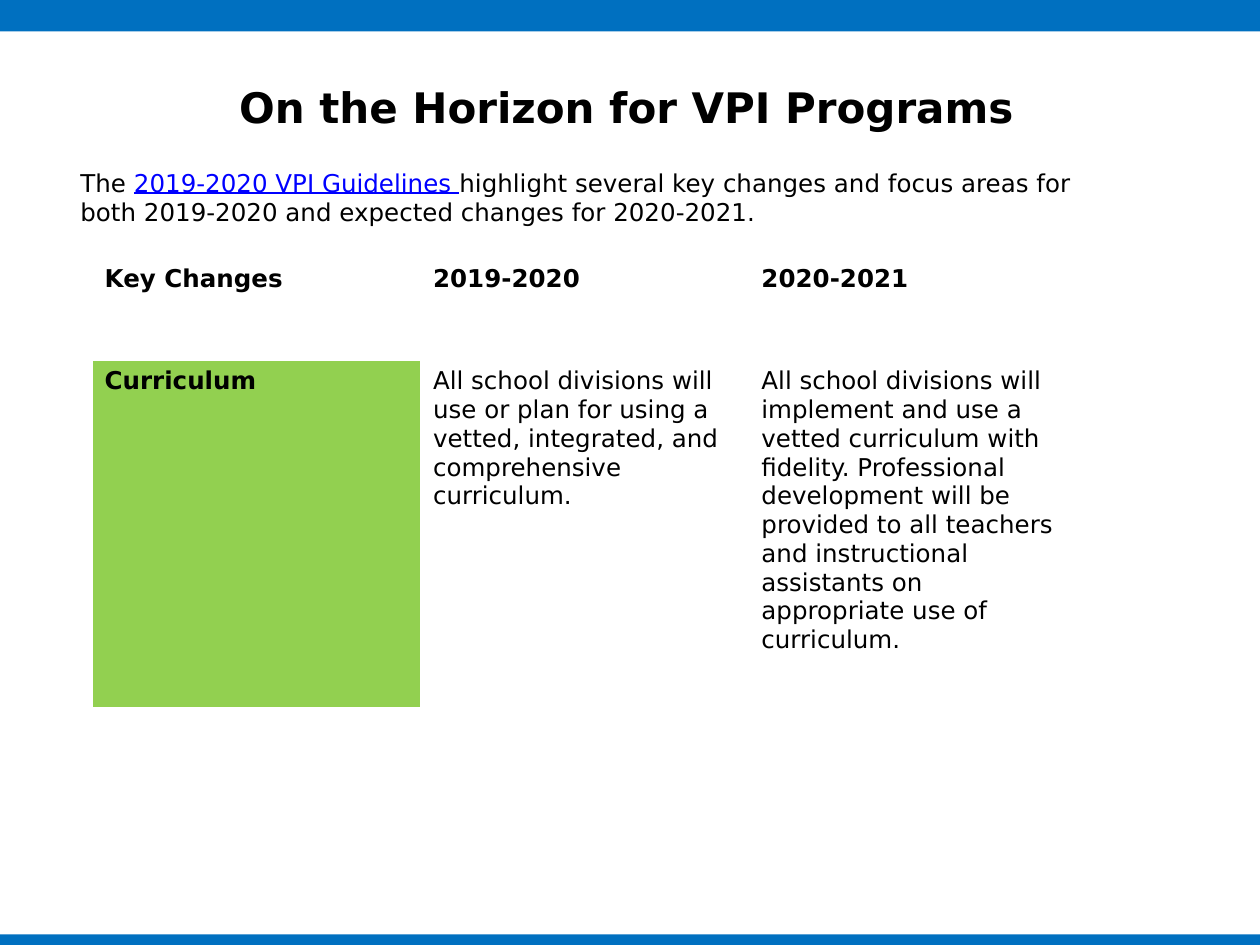
from pptx import Presentation
from pptx.dml.color import RGBColor
from pptx.enum.shapes import MSO_SHAPE
from pptx.enum.text import MSO_ANCHOR, PP_ALIGN
from pptx.util import Pt

FONT = "DejaVu Sans"
BLUE, GREEN, BLACK, LINK = "0070C0", "92D050", "000000", "0000FF"
WIDTH, HEIGHT = 720, 540

ROWS = [
    ["Key Changes", "2019-2020", "2020-2021"],
    ["Curriculum",
     "All school divisions will use or plan for using a vetted, integrated, "
     "and comprehensive curriculum.",
     "All school divisions will implement and use a vetted curriculum with "
     "fidelity. Professional development will be provided to all teachers and "
     "instructional assistants on appropriate use of curriculum."],
]


def rgb(value):
    return RGBColor.from_string(value)


def add_run(p, text, size=14, color=BLACK, bold=False, underline=False):
    r = p.add_run()
    r.text = text
    r.font.name = FONT
    r.font.size = Pt(size)
    r.font.color.rgb = rgb(color)
    r.font.bold = bold
    r.font.underline = underline


def add_box(s, x, y, w, h, anchor=MSO_ANCHOR.TOP):
    tf = s.shapes.add_textbox(Pt(x), Pt(y), Pt(w), Pt(h)).text_frame
    tf.word_wrap = True
    tf.vertical_anchor = anchor
    return tf.paragraphs[0]


def add_band(s, x, y, w, h):
    sp = s.shapes.add_shape(MSO_SHAPE.RECTANGLE, Pt(x), Pt(y), Pt(w), Pt(h))
    sp.shadow.inherit = False
    sp.fill.solid()
    sp.fill.fore_color.rgb = rgb(BLUE)
    sp.line.fill.background()


def add_title(s, x, y, w, h):
    p = add_box(s, x, y, w, h, MSO_ANCHOR.MIDDLE)
    p.alignment = PP_ALIGN.CENTER
    add_run(p, "On the Horizon for VPI Programs", size=24, bold=True)


def add_intro(s, x, y, w, h):
    p = add_box(s, x, y, w, h)
    add_run(p, "The ")
    add_run(p, "2019-2020 VPI Guidelines ", color=LINK, underline=True)
    add_run(p, "highlight several key changes and focus areas for both "
               "2019-2020 and expected changes for 2020-2021.")


def add_changes_table(s, x, y, w, row_heights):
    table = s.shapes.add_table(len(ROWS), len(ROWS[0]), Pt(x), Pt(y),
                               Pt(w), Pt(sum(row_heights))).table
    table.first_row = table.horz_banding = False
    for column in table.columns:
        column.width = Pt(w / len(ROWS[0]))
    for i, (texts, height) in enumerate(zip(ROWS, row_heights)):
        table.rows[i].height = Pt(height)
        for j, text in enumerate(texts):
            cell = table.cell(i, j)
            # Only the row label below the header is coloured
            if i > 0 and j == 0:
                cell.fill.solid()
                cell.fill.fore_color.rgb = rgb(GREEN)
            else:
                cell.fill.background()
            add_run(cell.text_frame.paragraphs[0], text, bold=i == 0 or j == 0)


def main():
    prs = Presentation()
    prs.slide_width, prs.slide_height = Pt(WIDTH), Pt(HEIGHT)
    s = prs.slides.add_slide(prs.slide_layouts[6])

    # Top and bottom bands
    add_band(s, 0, 0, WIDTH, 18)
    add_band(s, 0, HEIGHT - 6, WIDTH, 6)

    # Title, introduction and table
    add_title(s, 34, 37.5, 648, 47.5)
    add_intro(s, 38.9, 92.2, 590.4, 41)
    add_changes_table(s, 52.6, 147.6, 563, [58.5, 198.5])

    prs.save("out.pptx")


if __name__ == "__main__":
    main()
